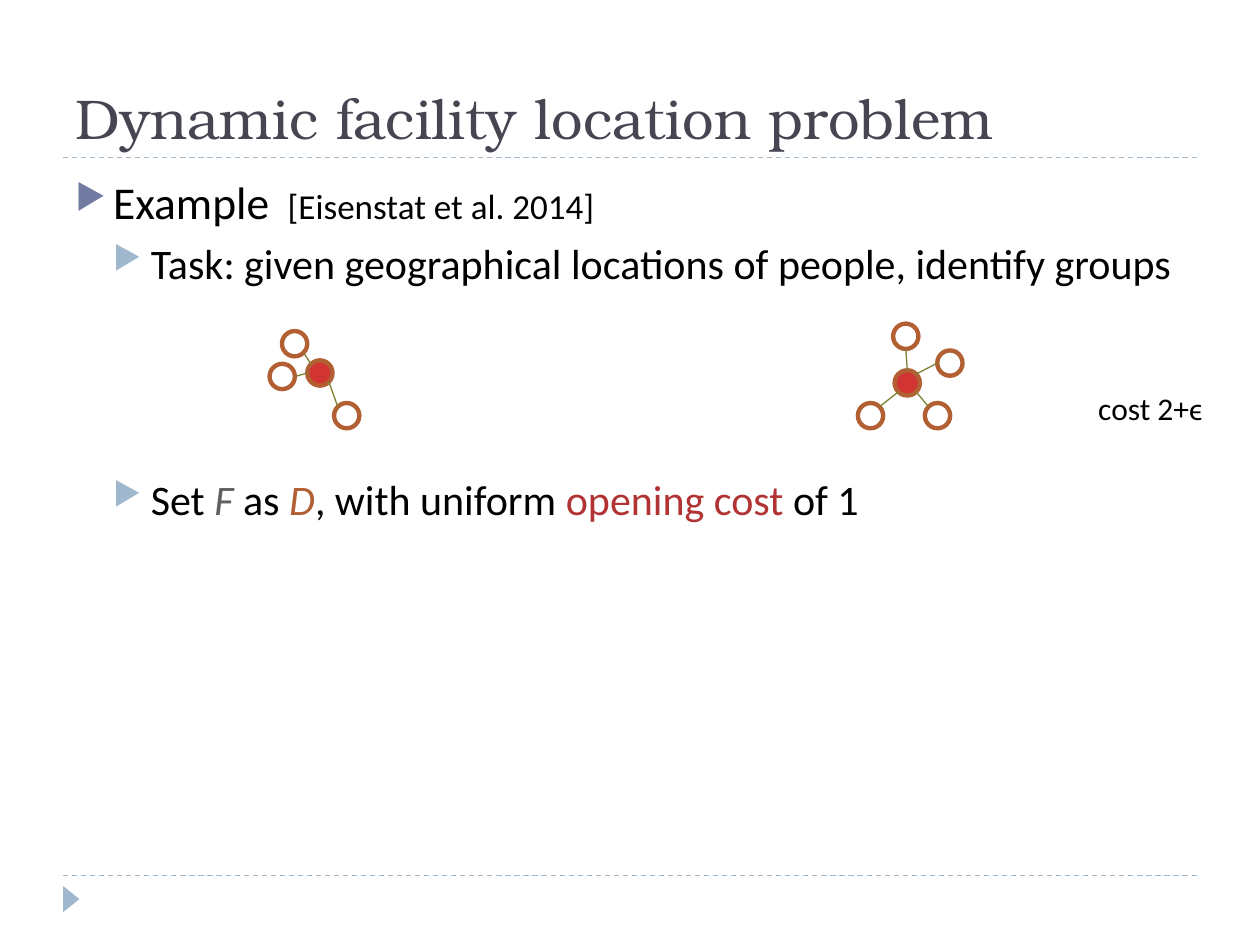
import math
from dataclasses import dataclass

from pptx import Presentation
from pptx.dml.color import RGBColor
from pptx.enum import dml, shapes, text
from pptx.oxml import ns, xmlchemy
from pptx.util import Cm, Pt


@dataclass(frozen=True)
class Theme:
    heading_font: str = "TeX Gyre Bonum"
    body_font: str = "Calibri"
    title: str = "464653"
    ink: str = "000000"
    rule: str = "9FB8CD"
    bullet: str = "727CA3"
    facility: str = "606060"
    client: str = "B26033"
    cost: str = "B23333"
    hub: str = "D23333"
    node: str = "FFFFFF"
    link: str = "808033"
    title_size: int = 32
    body_size: int = 26
    sub_size: int = 24
    cite_size: int = 20
    note_size: int = 18


T = Theme()
DIAMETER = 0.51

# Each member: centre x, centre y, member site, hub site.
TOP, TOP_LEFT, LEFT, BOTTOM_LEFT, BOTTOM, BOTTOM_RIGHT, RIGHT, TOP_RIGHT = range(8)
GROUPS = [
    ((18.29, 7.72), [
        (18.26, 6.78, BOTTOM, TOP),
        (19.15, 7.32, LEFT, TOP_RIGHT),
        (17.55, 8.38, TOP_RIGHT, BOTTOM_LEFT),
        (18.9, 8.38, TOP_LEFT, BOTTOM_RIGHT),
    ]),
    ((6.45, 7.52), [
        (5.94, 6.93, BOTTOM_RIGHT, TOP_LEFT),
        (5.69, 7.59, RIGHT, LEFT),
        (6.99, 8.38, TOP_LEFT, BOTTOM_RIGHT),
    ]),
]


def rgb(color):
    return RGBColor.from_string(color)


def add_run(p, content, size=T.sub_size, color=T.ink, font=T.body_font, italic=False):
    r = p.add_run()
    r.text = content
    r.font.size = Pt(size)
    r.font.name = font
    r.font.italic = italic
    r.font.color.rgb = rgb(color)


def add_box(s, x, y, w, h, anchor=text.MSO_ANCHOR.TOP):
    tf = s.shapes.add_textbox(Cm(x), Cm(y), Cm(w), Cm(h)).text_frame
    tf.word_wrap = True
    tf.vertical_anchor = anchor
    return tf


def set_bullet(p, level, color, before):
    p.level = level
    p.space_before = Pt(before)
    ppr = p._p.get_or_add_pPr()
    ppr.set("marL", str(Cm(0.76 * (level + 1))))
    ppr.set("indent", str(Cm(-0.76)))
    clr = xmlchemy.OxmlElement("a:buClr")
    srgb = xmlchemy.OxmlElement("a:srgbClr")
    srgb.set("val", color)
    clr.append(srgb)
    size = xmlchemy.OxmlElement("a:buSzPct")
    size.set("val", "76000")
    char = xmlchemy.OxmlElement("a:buChar")
    char.set("char", "▶")
    ppr.extend([clr, size, char])


def add_line(s, start, end, color, dash=None):
    c = s.shapes.add_connector(
        shapes.MSO_CONNECTOR.STRAIGHT, *(Cm(v) for v in (*start, *end)))
    c.line.color.rgb = rgb(color)
    c.line.width = Pt(0.75)
    if dash:
        c.line.dash_style = dash
    c._element.find(ns.qn("p:spPr")).append(xmlchemy.OxmlElement("a:effectLst"))


def add_node(s, x, y, fill):
    sp = s.shapes.add_shape(
        shapes.MSO_SHAPE.OVAL, Cm(x - DIAMETER / 2), Cm(y - DIAMETER / 2),
        Cm(DIAMETER), Cm(DIAMETER))
    sp.shadow.inherit = False
    sp.fill.solid()
    sp.fill.fore_color.rgb = rgb(fill)
    sp.line.color.rgb = rgb(T.client)
    sp.line.width = Pt(2.5)


def site_point(x, y, site):
    angle = math.radians(90 + 45 * site)
    return x + DIAMETER / 2 * math.cos(angle), y - DIAMETER / 2 * math.sin(angle)


def add_group(s, hub, members):
    add_node(s, *hub, T.hub)
    for x, y, site, hub_site in members:
        add_node(s, x, y, T.node)
        add_line(s, site_point(x, y, site), site_point(*hub, hub_site), T.link)


def add_frame(s):
    for y in (17.65, 3.18):
        add_line(s, (1.27, y), (24.13, y), T.rule, dml.MSO_LINE.DASH)
    sp = s.shapes.add_shape(
        shapes.MSO_SHAPE.ISOSCELES_TRIANGLE, Cm(1.17), Cm(17.96), Cm(0.53), Cm(0.33))
    sp.rotation = 90
    sp.shadow.inherit = False
    sp.fill.solid()
    sp.fill.fore_color.rgb = rgb(T.rule)
    sp.line.fill.background()


def add_body(s):
    tf = add_box(s, 1.27, 3.38, 23.52, 13.72)
    p = tf.paragraphs[0]
    set_bullet(p, 0, T.bullet, 6)
    add_run(p, "Example ", size=T.body_size)
    add_run(p, " [Eisenstat et al. 2014]", size=T.cite_size)

    p = tf.add_paragraph()
    set_bullet(p, 1, T.rule, 5)
    add_run(p, "Task: given geographical locations of people, identify groups")

    p = tf.add_paragraph()
    set_bullet(p, 1, T.rule, 106)
    add_run(p, "Set ")
    add_run(p, "F", color=T.facility, italic=True)
    add_run(p, " as ")
    add_run(p, "D", color=T.client, italic=True)
    add_run(p, ", with uniform ")
    add_run(p, "opening cost", color=T.cost)
    add_run(p, " of 1")


def main():
    prs = Presentation()
    prs.slide_width, prs.slide_height = Cm(25.4), Cm(19.05)
    s = prs.slides.add_slide(prs.slide_layouts[6])
    add_frame(s)
    title = add_box(s, 1.27, 0.43, 23.93, 2.74, anchor=text.MSO_ANCHOR.BOTTOM)
    add_run(title.paragraphs[0], "Dynamic facility location problem",
            size=T.title_size, color=T.title, font=T.heading_font)
    add_body(s)
    for hub, members in GROUPS:
        add_group(s, hub, members)
    note = add_box(s, 21.89, 7.72, 4.29, 1.02)
    add_run(note.paragraphs[0], "cost 2+ϵ", size=T.note_size)
    prs.save("out.pptx")


if __name__ == "__main__":
    main()
